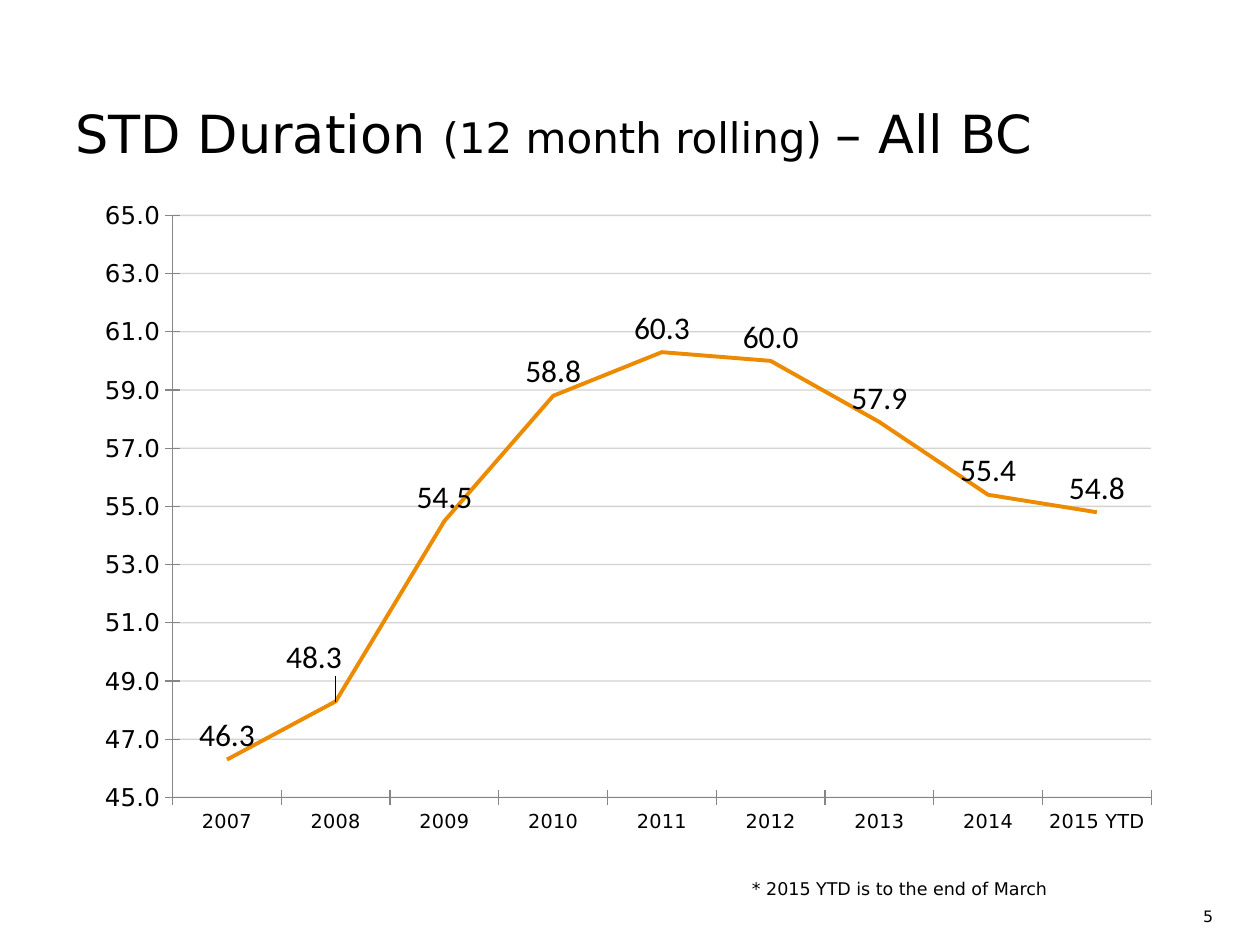
from dataclasses import dataclass

from lxml import etree
from pptx import Presentation
from pptx.chart.data import CategoryChartData
from pptx.dml.color import RGBColor
from pptx.enum.chart import XL_CHART_TYPE, XL_LABEL_POSITION, XL_TICK_MARK
from pptx.enum.text import MSO_ANCHOR
from pptx.oxml import parse_xml
from pptx.oxml.ns import nsdecls, qn
from pptx.util import Inches, Pt

LINE = XL_CHART_TYPE.LINE
ABOVE = XL_LABEL_POSITION.ABOVE
CROSS = XL_TICK_MARK.CROSS
TOP, MIDDLE = MSO_ANCHOR.TOP, MSO_ANCHOR.MIDDLE

SANS, LABEL = "DejaVu Sans", "Calibri"
BLACK, ORANGE, GRID, AXIS = "000000", "ED8B00", "776E64", "868686"
FORMAT = "#,##0.0"

YEARS = [str(year) for year in range(2007, 2015)] + ["2015 YTD"]
DAYS = [46.3, 48.3, 54.5, 58.8, 60.3, 60, 57.9, 55.4, 54.8]


@dataclass
class Note:
    left: float
    top: float
    width: float
    height: float
    runs: list[tuple[str, int]]
    anchor: MSO_ANCHOR = TOP


NOTES = [
    Note(0.5, 0.75, 9.07, 1.12,
         [("STD Duration ", 30), ("(12 month rolling) ", 24), ("– All BC", 30)]),
    Note(9.45, 7.07, 0.51, 0.4, [("5", 9)], MIDDLE),
    Note(5.87, 6.92, 3.24, 0.27, [("* 2015 YTD is to the end of March", 10)]),
]


def color(code: str) -> RGBColor:
    return RGBColor.from_string(code)


def set_font(font, name: str, size: int) -> None:
    font.name = name
    font.size = Pt(size)
    font.color.rgb = color(BLACK)


def set_line(line, code: str, width: float) -> None:
    line.color.rgb = color(code)
    line.width = Pt(width)


def add_note(slide, note: Note) -> None:
    box = slide.shapes.add_textbox(Inches(note.left), Inches(note.top),
                                   Inches(note.width), Inches(note.height))
    frame = box.text_frame
    frame.word_wrap = True
    frame.vertical_anchor = note.anchor
    for text, size in note.runs:
        run = frame.paragraphs[0].add_run()
        run.text = text
        set_font(run.font, SANS, size)


def make_layout(inner: bool = False, **parts: float):
    """Build a manual layout for the plot or for one label."""
    xml = '<c:layoutTarget val="inner"/>' if inner else ""
    if inner:
        xml += '<c:xMode val="edge"/><c:yMode val="edge"/>'
    xml += "".join(f'<c:{key} val="{val}"/>' for key, val in parts.items())
    return parse_xml(f'<c:layout {nsdecls("c")}><c:manualLayout>{xml}'
                     '</c:manualLayout></c:layout>')


def set_axis(axis, size: int) -> None:
    axis.major_tick_mark = CROSS
    set_font(axis.tick_labels.font, SANS, size)
    set_line(axis.format.line, AXIS, 0.75)


def add_graph(slide) -> None:
    data = CategoryChartData(number_format=FORMAT)
    data.categories = YEARS
    data.add_series("Series 1", DAYS)
    chart = slide.shapes.add_chart(LINE, Inches(0.68), Inches(1.5),
                                   Inches(8.63), Inches(5.25), data).chart
    chart.has_title = False
    chart.has_legend = False
    set_font(chart.font, LABEL, 18)

    # Plot area
    area = chart.plots[0]
    area.vary_by_categories = False
    plot = chart._chartSpace.chart.plotArea
    for old in plot.findall(qn("c:layout")):
        plot.remove(old)
    plot.insert(0, make_layout(True, x=0.08, y=0.04, w=0.9, h=0.88))

    # Axes and gridlines
    set_axis(chart.category_axis, 11)
    scale = chart.value_axis
    set_axis(scale, 14)
    scale.minimum_scale, scale.maximum_scale, scale.major_unit = 45, 65, 2
    scale.tick_labels.number_format = FORMAT
    scale.tick_labels.number_format_is_linked = False
    grid = scale.major_gridlines.format.line
    set_line(grid, GRID, 0.75)
    tint = scale.major_gridlines._xAx.find(
        f'{qn("c:majorGridlines")}//{qn("a:srgbClr")}')
    etree.SubElement(tint, qn("a:alpha")).set("val", "30000")

    # Line and labels
    series = area.series[0]
    series.smooth = False
    set_line(series.format.line, ORANGE, 2.25)
    labels = series.data_labels
    labels.show_value = True
    labels.position = ABOVE
    labels.number_format = FORMAT
    labels.number_format_is_linked = False
    set_font(labels.font, LABEL, 18)

    # The 2008 label sits up and left of its point
    label = series.points[1].data_label
    label.position = ABOVE
    set_font(label.font, LABEL, 18)
    mark = labels._element.find(qn("c:dLbl"))
    mark.insert(1, make_layout(x=-0.02, y=-0.03))


def main() -> None:
    deck = Presentation()
    deck.slide_width, deck.slide_height = Inches(10), Inches(7.5)
    slide = deck.slides.add_slide(deck.slide_layouts[6])
    add_graph(slide)
    for note in NOTES:
        add_note(slide, note)
    deck.save("out.pptx")


if __name__ == "__main__":
    main()
